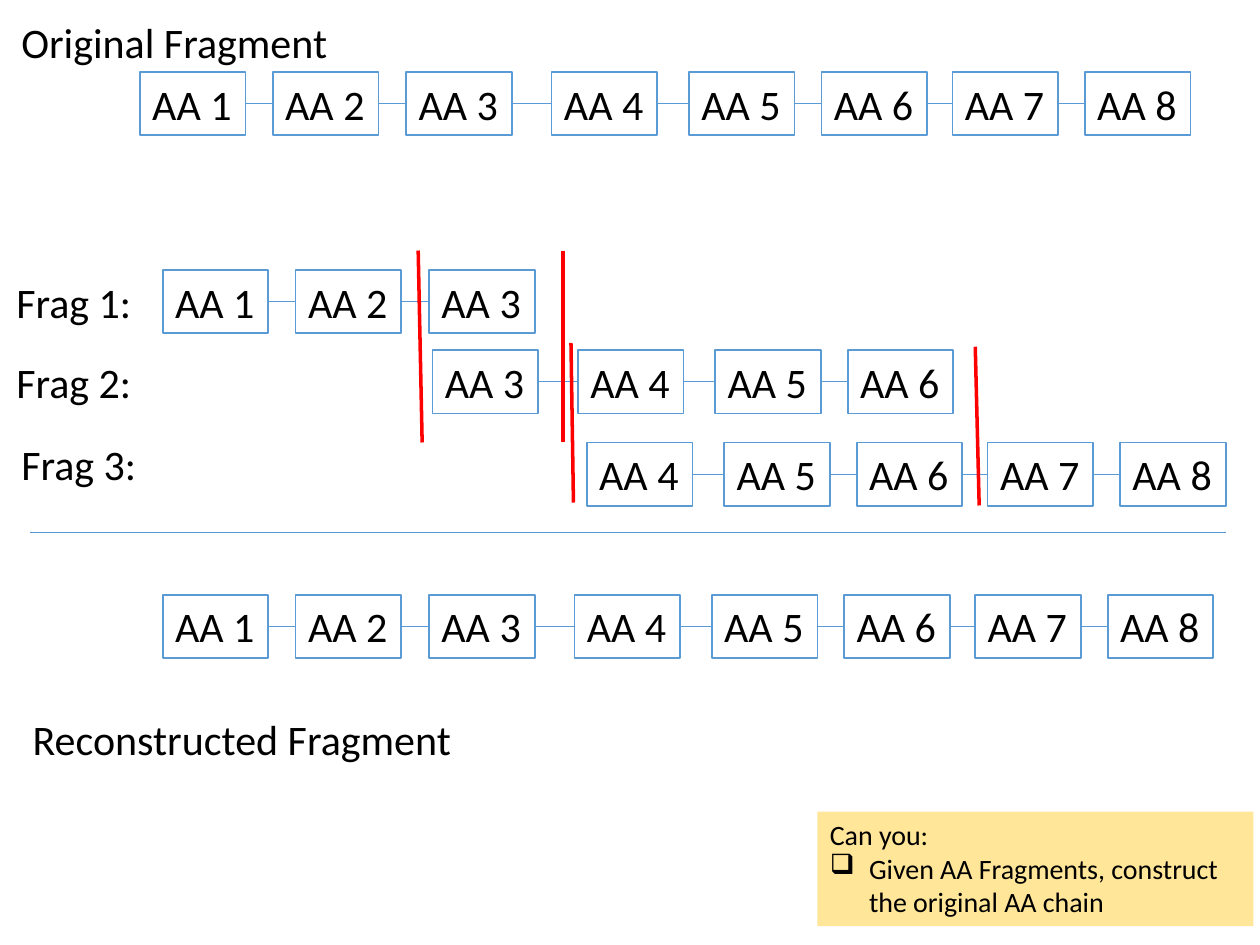
from dataclasses import dataclass

from lxml import etree
from pptx import Presentation
from pptx.dml.color import RGBColor
from pptx.enum.shapes import MSO_CONNECTOR, MSO_SHAPE
from pptx.enum.text import MSO_ANCHOR, MSO_AUTO_SIZE, PP_ALIGN
from pptx.oxml.ns import qn
from pptx.util import Cm, Pt

RECTANGLE = MSO_SHAPE.RECTANGLE
STRAIGHT = MSO_CONNECTOR.STRAIGHT
TOP, LEFT = MSO_ANCHOR.TOP, PP_ALIGN.LEFT
FIT_SHAPE = MSO_AUTO_SIZE.SHAPE_TO_FIT_TEXT

BOX_WIDTH, BOX_HEIGHT = 2.13, 1.28
LINK_DROP = 0.64
BOX_OFFSETS = (0, 2.68, 5.37, 8.3, 11.07, 13.74, 16.38, 19.05)

CHAINS = (
    (2.82, 1.45, 1, 8),
    (3.28, 5.44, 1, 3),
    (3.35, 7.06, 3, 6),
    (3.53, 8.92, 4, 8),
    (3.28, 11.99, 1, 8),
)
LABELS = (
    ("Original Fragment", 0.18, 0.2, 6.73),
    ("Frag 1:", 0.08, 5.44, 2.84),
    ("Frag 2:", 0.08, 7.06, 2.84),
    ("Frag 3:", 0.18, 8.71, 2.84),
    ("Reconstructed Fragment", 0.41, 14.25, 9.02),
)
CUTS = (
    (8.43, 5.05, 8.51, 8.92),
    (11.35, 5.05, 11.35, 8.92),
    (19.66, 6.99, 19.74, 10.19),
    (11.51, 6.91, 11.56, 10.13),
)


@dataclass(frozen=True)
class Theme:
    font: str = "Calibri"
    ink: RGBColor = RGBColor(0x00, 0x00, 0x00)
    paper: RGBColor = RGBColor(0xFF, 0xFF, 0xFF)
    chain: RGBColor = RGBColor(0x5B, 0x9B, 0xD5)
    cut: RGBColor = RGBColor(0xFF, 0x00, 0x00)
    note: RGBColor = RGBColor(0xFF, 0xE6, 0x99)
    label_size: int = 24
    note_size: int = 16


class FragmentSlide:
    """Draws amino acid chains, cuts and labels in one style on one slide."""

    def __init__(self, slide, theme):
        self.slide = slide
        self.theme = theme

    def set_text(self, text_frame, text, size, wrap=False):
        text_frame.text = text
        text_frame.word_wrap = wrap
        text_frame.auto_size = FIT_SHAPE
        text_frame.vertical_anchor = TOP
        for paragraph in text_frame.paragraphs:
            paragraph.alignment = LEFT
            for run in paragraph.runs:
                run.font.name = self.theme.font
                run.font.size = Pt(size)
                run.font.color.rgb = self.theme.ink

    def rectangle(self, left, top, width, height, fill):
        shape = self.slide.shapes.add_shape(
            RECTANGLE, Cm(left), Cm(top), Cm(width), Cm(height))
        shape.shadow.inherit = False
        shape.fill.solid()
        shape.fill.fore_color.rgb = fill
        shape.line.fill.background()
        return shape

    def line(self, start_x, start_y, end_x, end_y, color, weight):
        connector = self.slide.shapes.add_connector(
            STRAIGHT, Cm(start_x), Cm(start_y), Cm(end_x), Cm(end_y))
        connector.line.color.rgb = color
        connector.line.width = Pt(weight)
        etree.SubElement(connector._element.spPr, qn("a:effectLst"))

    def label(self, text, left, top, width):
        shape = self.slide.shapes.add_textbox(
            Cm(left), Cm(top), Cm(width), Cm(BOX_HEIGHT))
        self.set_text(shape.text_frame, text, self.theme.label_size)

    def acid(self, number, left, top):
        shape = self.rectangle(left, top, BOX_WIDTH, BOX_HEIGHT, self.theme.paper)
        shape.line.color.rgb = self.theme.chain
        shape.line.width = Pt(1)
        self.set_text(shape.text_frame, f"AA {number}", self.theme.label_size)

    def chain(self, origin, top, first, last):
        start = origin
        lefts = [start + offset for offset in BOX_OFFSETS[first - 1:last]]
        for number, left in enumerate(lefts, first):
            self.acid(number, left, top)
        middle = top + LINK_DROP
        for left, following in zip(lefts, lefts[1:]):
            self.line(left + BOX_WIDTH, middle, following, middle,
                      self.theme.chain, 0.5)

    def note(self, heading, task, left, top, width, height):
        shape = self.rectangle(left, top, width, height, self.theme.note)
        self.set_text(shape.text_frame, f"{heading}\n{task}",
                      self.theme.note_size, wrap=True)
        properties = shape.text_frame.paragraphs[1]._p.get_or_add_pPr()
        properties.set("marL", str(Cm(0.79)))
        properties.set("indent", str(-Cm(0.79)))
        etree.SubElement(properties, qn("a:buChar"), char="❑")


def main():
    presentation = Presentation()
    presentation.slide_width, presentation.slide_height = Cm(25.4), Cm(19.05)
    slide = presentation.slides.add_slide(presentation.slide_layouts[6])
    theme = Theme()
    page = FragmentSlide(slide, theme)
    for chain in CHAINS:
        page.chain(*chain)
    for label in LABELS:
        page.label(*label)
    page.line(0.61, 10.74, 24.71, 10.74, theme.chain, 0.5)
    for cut in CUTS:
        page.line(*cut, theme.cut, 2)
    page.note("Can you:", "Given AA Fragments, construct the original AA chain",
              16.48, 16.36, 8.79, 2.31)
    presentation.save("out.pptx")


if __name__ == "__main__":
    main()
